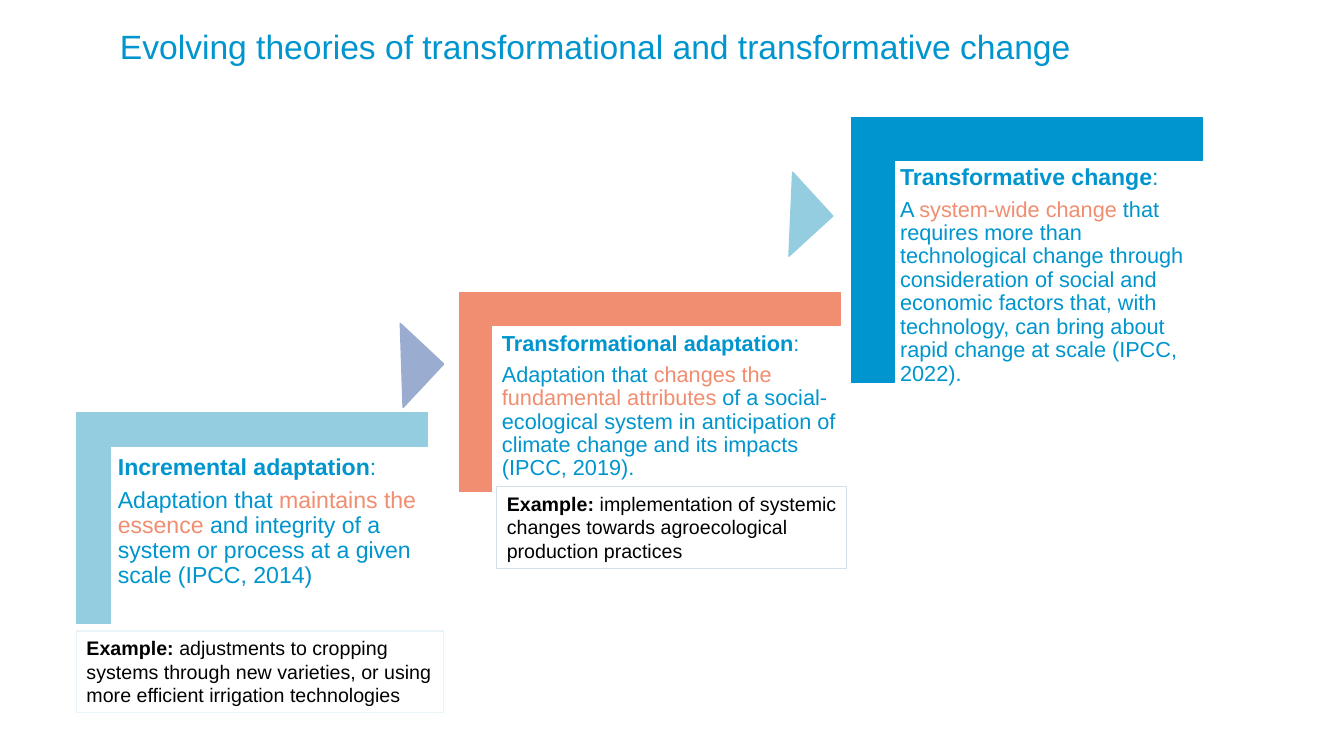
from pptx import Presentation
from pptx import util as u
from pptx.dml.color import RGBColor
from pptx.enum import shapes, text

COLUMNS, ROWS = 40, 22.5
CELL = u.Inches(1) / 3
FONT = "Arial"
COLOURS = {
    "page": "FEFFFE",
    "blue": "0095CE",
    "sky": "93CDDF",
    "coral": "F18D70",
    "lavender": "9AACCF",
    "black": "000000",
    "pale_sky": "E9F5F9",
    "pale_lavender": "D7DEEC",
}

STAGES = [
    {
        "corner": (2.27, 12.28, 10.44, 6.27),
        "words": (3.3, 13.35, 9.42, 5.7),
        "colour": "sky",
        "sizes": (16.5, 16.5),
        "name": "Incremental adaptation",
        "definition": [
            ("Adaptation that ", "blue"),
            ("maintains the essence", "coral"),
            (" and integrity of a system or process at a given scale (IPCC, 2014)", "blue"),
        ],
    },
    {
        "corner": (13.67, 8.72, 11.34, 5.91),
        "words": (14.73, 9.69, 10.38, 6.48),
        "colour": "coral",
        "sizes": (15.5, 15.5),
        "name": "Transformational adaptation",
        "definition": [
            ("Adaptation that ", "blue"),
            ("changes the fundamental attributes ", "coral"),
            ("of a social-ecological system in anticipation of climate change "
             "and its impacts (IPCC, 2019).", "blue"),
        ],
    },
    {
        "corner": (25.34, 3.5, 10.44, 7.89),
        "words": (26.58, 4.71, 9.42, 8.25),
        "colour": "blue",
        "sizes": (16.5, 15.5),
        "name": "Transformative change",
        "definition": [
            ("A ", "blue"),
            ("system-wide change ", "coral"),
            ("that requires more than technological change through consideration "
             "of social and economic factors that, with technology, can bring about "
             "rapid change at scale (IPCC, 2022).", "blue"),
        ],
    },
]

ARROWS = [
    ((11.07, 9.99, 1.77, 1.77), 313.1, "lavender"),
    ((22.65, 5.49, 1.77, 1.77), 317.5, "sky"),
]

EXAMPLES = [
    ((2.28, 18.78, 10.92, 2.43), "pale_sky", 1,
     "adjustments to cropping systems through new varieties, "
     "or using more efficient irrigation technologies"),
    ((14.79, 14.49, 10.41, 2.43), "pale_lavender", 0.75,
     "implementation of systemic changes towards agroecological production practices"),
]


def colour(name):
    return RGBColor.from_string(COLOURS[name])


def place(area):
    return [u.Emu(round(cells * CELL)) for cells in area]


def add_span(para, words, size, tint, bold=False):
    span = para.add_run()
    span.text = words
    span.font.name = FONT
    span.font.size = u.Pt(size)
    span.font.bold = bold
    span.font.color.rgb = colour(tint)


def add_outlined(page, kind, area, line, width, fill=None):
    shape = page.shapes.add_shape(kind, *place(area))
    shape.shadow.inherit = False
    shape.line.color.rgb = colour(line)
    shape.line.width = u.Pt(width)
    if fill:
        shape.fill.solid()
        shape.fill.fore_color.rgb = colour(fill)
    else:
        shape.fill.background()
    return shape


def add_title(page, words):
    title = page.shapes.title
    title.left, title.top, title.width, title.height = place((3.27, 0.18, 29.01, 1.95))
    frame = title.text_frame
    frame.auto_size = text.MSO_AUTO_SIZE.NONE
    frame.vertical_anchor = text.MSO_ANCHOR.BOTTOM
    para = frame.paragraphs[0]
    para.alignment = text.PP_ALIGN.LEFT
    para.line_spacing = 0.9
    add_span(para, words, 24, "blue")


def add_corner(page, area, tint):
    left, top, width, height = area
    shift = (width - height) / 2
    upright = (left + shift, top - shift, height, width)
    corner = add_outlined(page, shapes.MSO_SHAPE.CORNER, upright, tint, 1, tint)
    corner.rotation = 90
    for index in range(2):
        corner.adjustments[index] = 0.161


def add_stage(page, stage):
    add_corner(page, stage["corner"], stage["colour"])
    box = page.shapes.add_textbox(*place(stage["words"]))
    frame = box.text_frame
    frame.word_wrap = True
    frame.margin_left = frame.margin_right = u.Inches(0.07)
    frame.margin_top = frame.margin_bottom = u.Inches(0.07)
    name_size, definition_size = stage["sizes"]
    heading = frame.paragraphs[0]
    add_span(heading, stage["name"], name_size, "blue", True)
    add_span(heading, ":", name_size, "blue")
    definition = frame.add_paragraph()
    for words, tint in stage["definition"]:
        add_span(definition, words, definition_size, tint)
    for para, size in zip(frame.paragraphs, stage["sizes"]):
        para.line_spacing = 0.9
        para.space_after = u.Pt(round(size * 0.35, 1))


def add_arrow(page, area, angle, tint):
    arrow = add_outlined(page, shapes.MSO_SHAPE.ISOSCELES_TRIANGLE, area, tint, 1, tint)
    arrow.adjustments[0] = 1
    arrow.rotation = angle


def add_example(page, area, line, width, words):
    box = add_outlined(page, shapes.MSO_SHAPE.RECTANGLE, area, line, width)
    frame = box.text_frame
    frame.word_wrap = True
    frame.auto_size = text.MSO_AUTO_SIZE.SHAPE_TO_FIT_TEXT
    frame.vertical_anchor = text.MSO_ANCHOR.TOP
    para = frame.paragraphs[0]
    para.alignment = text.PP_ALIGN.LEFT
    add_span(para, "Example: ", 14, "black", True)
    add_span(para, words, 14, "black")


def main():
    deck = Presentation()
    deck.slide_width, deck.slide_height = place((COLUMNS, ROWS))
    page = deck.slides.add_slide(deck.slide_layouts.get_by_name("Title Only"))
    page.background.fill.solid()
    page.background.fill.fore_color.rgb = colour("page")
    add_title(page, "Evolving theories of transformational and transformative change")
    for stage in STAGES:
        add_stage(page, stage)
    for arrow in ARROWS:
        add_arrow(page, *arrow)
    for example in EXAMPLES:
        add_example(page, *example)
    deck.save("out.pptx")


if __name__ == "__main__":
    main()
